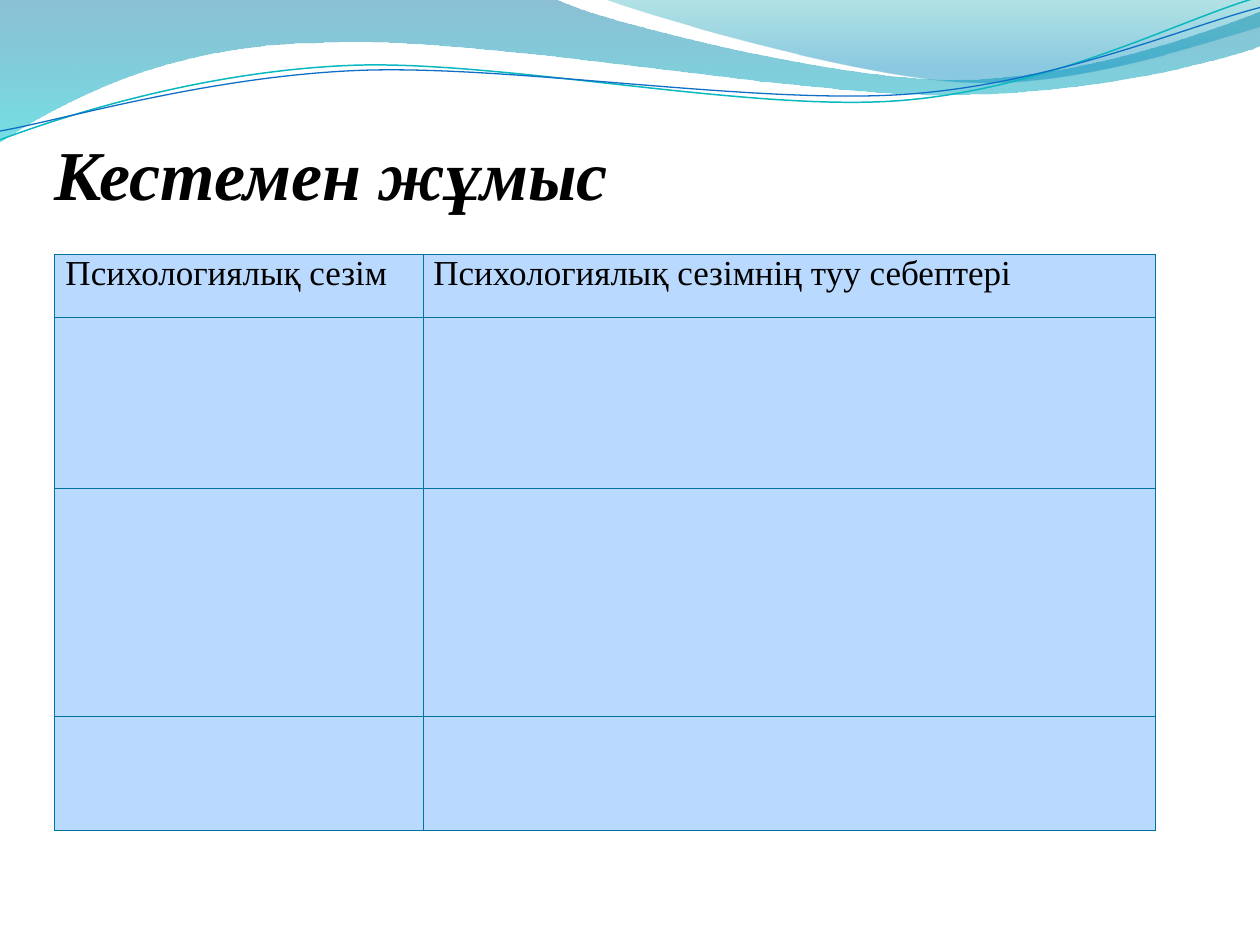
"""Build a slide with a wave banner, a title and a two-column worksheet table."""
from lxml.etree import SubElement
from pptx import Presentation
from pptx.dml.color import RGBColor
from pptx.enum.text import MSO_ANCHOR as Anchor, PP_ALIGN as Align
from pptx.oxml.ns import qn
from pptx.util import Inches, Pt

FONT = "Times New Roman"
COLORS = {
    "text": "000000",
    "border": "0074A1",
    "cell": "B9DAFE",
    "wave_top": "0074A1",
    "wave_bottom": "00C6CF",
    "crest_top": "00A1A9",
    "crest_bottom": "008BBF",
    "teal_line": "0AB8BF",
    "blue_line": "0F6FC6",
}

WAVE = [
    (0, -0.01), (4.4, -0.01),
    (4.76, 0.17, 6.64, 0.63, 7.58, 0.63), (8.53, 0.63, 9.58, 0.26, 10, 0.09),
    (10.01, 0.36),
    (9.83, 0.44, 8.7, 0.76, 7.46, 0.75), (6.22, 0.75, 3.82, 0.28, 2.57, 0.34),
    (1.29, 0.35, 0.46, 0.83, -0.01, 1.13), (0, -0.01),
]
CREST = [
    (4.79, -0.01),
    (5.09, 0.11, 6.82, 0.62, 7.69, 0.65), (8.56, 0.69, 9.61, 0.32, 10, 0.21),
    (10, 0), (4.79, -0.01),
]
TEAL_LINE = [
    (0, 1.11),
    (0.48, 0.93, 1.58, 0.57, 2.77, 0.52), (3.95, 0.47, 5.93, 0.89, 7.13, 0.8),
    (8.33, 0.71, 9.38, 0.15, 9.98, -0.02),
]
BLUE_LINE = [
    (0, 1.04),
    (0.47, 0.96, 1.64, 0.61, 2.83, 0.56), (4.03, 0.51, 5.97, 0.83, 7.17, 0.75),
    (8.36, 0.67, 9.41, 0.21, 10, 0.06),
]
HEADERS = ["Психологиялық сезім", "Психологиялық сезімнің туу себептері"]
COLUMN_WIDTHS = [2.93, 5.81]
ROW_HEIGHTS = [0.5, 1.36, 1.81, 0.9]


def rgb(name):
    """Return the named colour."""
    return RGBColor.from_string(COLORS[name])


def bend(shape, segments):
    """Turn the straight segments that have control points into cubic curves."""
    lines = list(shape.element.spPr.iter(qn("a:lnTo")))
    for line, segment in zip(lines, segments[1:]):
        if len(segment) == 2:
            continue
        curve = SubElement(line.getparent(), qn("a:cubicBezTo"))
        for x, y in zip(segment[::2], segment[1::2]):
            SubElement(curve, qn("a:pt"), x=str(Inches(x) - shape.left),
                       y=str(Inches(y) - shape.top))
        line.getparent().replace(line, curve)


def add_outline(page, segments, close):
    """Add a curved freeform without a shadow along the segments."""
    ends = [(Inches(segment[-2]), Inches(segment[-1])) for segment in segments]
    builder = page.shapes.build_freeform(*ends[0])
    builder.add_line_segments(ends[1:], close=close)
    shape = builder.convert_to_shape()
    bend(shape, segments)
    shape.shadow.inherit = False
    return shape


def add_wave(page, segments, stops):
    """Add a closed wave filled from top to bottom with translucent colours."""
    shape = add_outline(page, segments, True)
    shape.line.fill.background()
    shape.fill.gradient()
    shape.fill.gradient_angle = 270
    for stop, (position, color, _) in zip(shape.fill.gradient_stops, stops):
        stop.position = position
        stop.color.rgb = rgb(color)
    tints = shape.element.spPr.find(qn("a:gradFill")).iter(qn("a:srgbClr"))
    for tint, (_, _, opacity) in zip(tints, stops):
        SubElement(tint, qn("a:alpha"), val=str(opacity * 1000))


def add_wave_line(page, segments, color, width):
    """Add an open curved line."""
    shape = add_outline(page, segments, False)
    shape.fill.background()
    shape.line.color.rgb = rgb(color)
    shape.line.width = Pt(width)


def style_text(para, size):
    """Set the font of a paragraph's runs and return them."""
    for span in para.runs:
        span.font.name = FONT
        span.font.size = Pt(size)
        span.font.color.rgb = rgb("text")
    return para.runs


def add_title(page, text):
    """Add the slide title."""
    box = page.shapes.add_textbox(Inches(0.43), Inches(0.45), Inches(9), Inches(1.25))
    frame = box.text_frame
    frame.word_wrap = True
    frame.vertical_anchor = Anchor.BOTTOM
    frame.margin_left = frame.margin_right = frame.margin_bottom = 0
    frame.text = text
    for span in style_text(frame.paragraphs[0], 40):
        span.font.bold = span.font.italic = True


def style_cell(cell):
    """Give a cell its borders, fill and margins."""
    properties = cell._tc.get_or_add_tcPr()
    for side in ("lnL", "lnR", "lnT", "lnB"):
        border = SubElement(properties, qn(f"a:{side}"), w=str(Pt(0.75)))
        fill = SubElement(border, qn("a:solidFill"))
        SubElement(fill, qn("a:srgbClr"), val=COLORS["border"])
    cell.fill.solid()
    cell.fill.fore_color.rgb = rgb("cell")
    cell.margin_left = cell.margin_right = Inches(0.08)
    cell.margin_top = cell.margin_bottom = 0


def add_worksheet(page):
    """Add the table with its header texts and empty rows."""
    table = page.shapes.add_table(
        len(ROW_HEIGHTS), len(COLUMN_WIDTHS), Inches(0.43), Inches(2.02),
        Inches(sum(COLUMN_WIDTHS)), Inches(sum(ROW_HEIGHTS)),
    ).table
    table.first_row = table.horz_banding = False
    for column, width in zip(table.columns, COLUMN_WIDTHS):
        column.width = Inches(width)
    for row, height in zip(table.rows, ROW_HEIGHTS):
        row.height = Inches(height)
    for cell in table.iter_cells():
        style_cell(cell)
    for cell, header in zip(table.rows[0].cells, HEADERS):
        cell.text_frame.text = header
        para = cell.text_frame.paragraphs[0]
        para.alignment = Align.JUSTIFY
        style_text(para, 20)
    table.cell(0, 0).margin_left = Inches(0.09)


def main():
    """Build and save the deck."""
    deck = Presentation()
    deck.slide_width, deck.slide_height = Inches(10), Inches(7.5)
    page = deck.slides.add_slide(deck.slide_layouts[6])
    add_wave(page, WAVE, [(0, "wave_top", 45), (1, "wave_bottom", 55)])
    add_wave(page, CREST, [(0, "crest_top", 30), (0.8, "crest_bottom", 45)])
    add_wave_line(page, TEAL_LINE, "teal_line", 0.85)
    add_wave_line(page, BLUE_LINE, "blue_line", 0.75)
    add_title(page, "Кестемен жұмыс")
    add_worksheet(page)
    deck.save("out.pptx")


if __name__ == "__main__":
    main()
